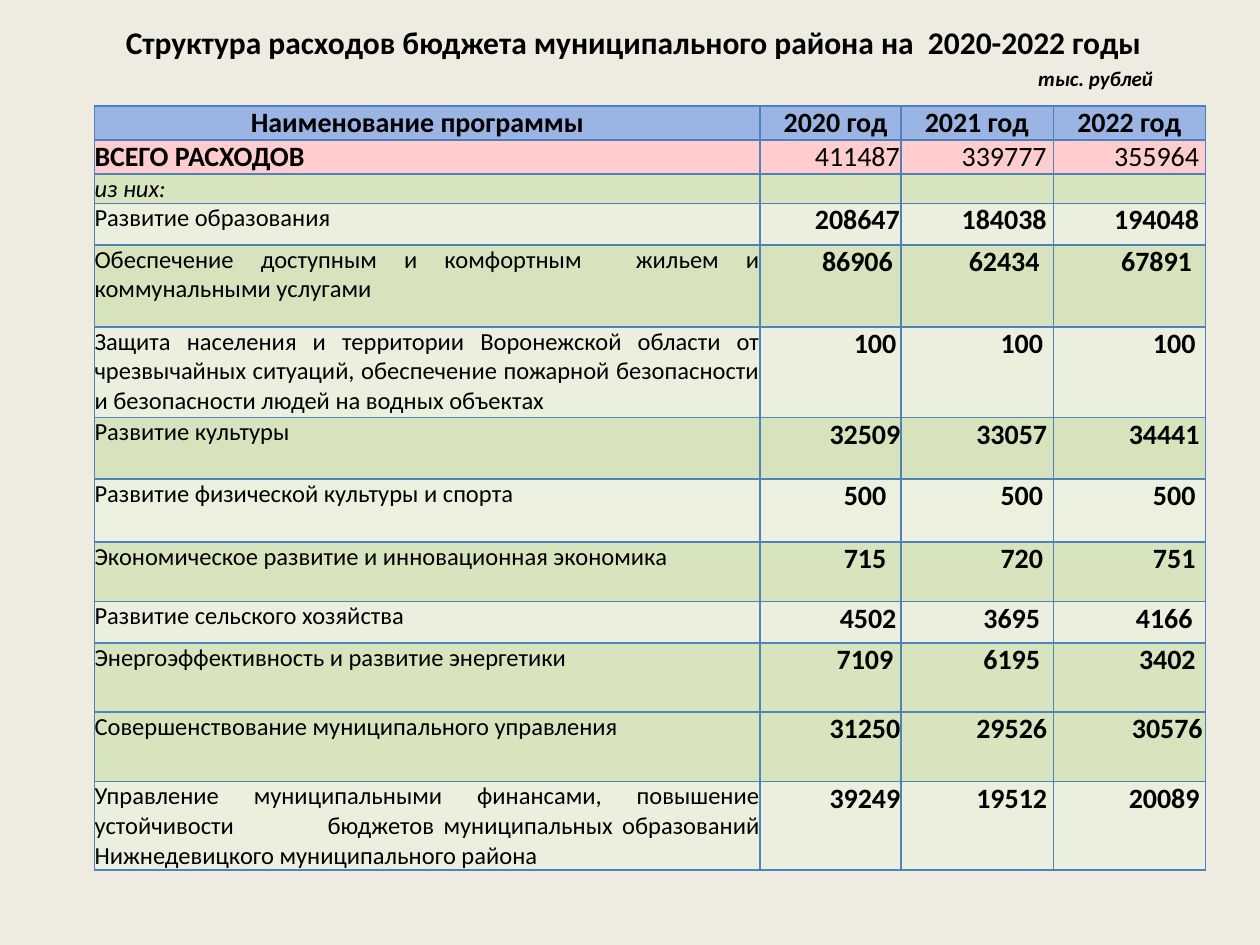
from lxml import etree
from pptx import Presentation
from pptx import util as u
from pptx.dml.color import RGBColor
from pptx.enum import text as t
from pptx.oxml import ns

MID, JUST = t.PP_ALIGN.CENTER, t.PP_ALIGN.JUSTIFY
HEAD, TOTAL, DARK, GREEN = "9AB5E3", "FFCDCD", "D7E4BD", "D6E3BC"
PALE, LIGHT = "EBF0DE", "EBF1DE"
COLS = [5.28, 1.12, 1.21, 1.21]
NAME = dict(size=14, align=JUST)

# Rows: height, fill, name, name format, values, value indents, value bold
ROWS = [
    (0.27, HEAD, "Наименование программы", dict(bold=True, left=1.24),
     ["2020 год", "2021 год", "2022 год"], [0.19] * 3, True),
    (0.27, TOTAL, "ВСЕГО РАСХОДОВ", dict(bold=True),
     [411487, 339777, 355964], [0.43] * 3, False),
    (0.23, DARK, "из них:", dict(size=14, italic=True),
     ["", "", ""], [0] * 3, False),
    (0.33, PALE, "Развитие образования", NAME,
     [208647, 184038, 194048], [0.43] * 3, True),
    (0.65, GREEN, "Обеспечение доступным и комфортным  жильем и "
     "коммунальными услугами", NAME,
     [86906, 62434, 67891], [0.43] * 3, True),
    (0.72, PALE, "Защита населения и территории Воронежской области от "
     "чрезвычайных ситуаций, обеспечение пожарной безопасности и "
     "безопасности людей на водных объектах", NAME,
     [100, 100, 100], [0.71] * 3, True),
    (0.49, GREEN, "Развитие культуры", NAME,
     [32509, 33057, 34441], [0.55] * 3, True),
    (0.5, LIGHT, "Развитие физической культуры и спорта", NAME,
     [500, 500, 500], [0.55, 0.71, 0.71], True),
    (0.47, DARK, "Экономическое развитие и инновационная экономика", NAME,
     [715, 720, 751], [0.55, 0.71, 0.71], True),
    (0.33, PALE, "Развитие сельского хозяйства", NAME,
     [4502, 3695, 4166], [0.6, 0.55, 0.55], True),
    (0.55, DARK, "Энергоэффективность и развитие энергетики", NAME,
     [7109, 6195, 3402], [0.55, 0.55, 0.6], True),
    (0.55, DARK, "Совершенствование муниципального управления", NAME,
     [31250, 29526, 30576], [0.55, 0.55, 0.6], True),
    (0.45, PALE, "Управление муниципальными финансами, повышение "
     "устойчивости\tбюджетов муниципальных образований "
     "Нижнедевицкого муниципального района", dict(NAME, tab=1.85),
     [39249, 19512, 20089], [0.55] * 3, True),
]


def color(code):
    return RGBColor.from_string(code)


def node(parent, tag, **attrs):
    return etree.SubElement(parent, ns.qn(tag), **attrs)


def write(frame, words, size=16, bold=False, italic=False, align=None,
          left=0, tab=0, font="Calibri", ink="000000"):
    para = frame.paragraphs[0]
    if align is not None:
        para.alignment = align
    props = para._p.get_or_add_pPr()
    if left:
        props.set("marL", str(u.Inches(left)))
        props.set("indent", "0")
    if tab:
        stops = node(props, "a:tabLst")
        node(stops, "a:tab", pos=str(u.Inches(tab)), algn="l")
    if not words:
        # An empty cell keeps its row low through its end mark
        node(para._p, "a:endParaRPr", sz=str(size * 100))
        return
    run = para.add_run()
    run.text = words
    face = run.font
    face.name, face.size = font, u.Pt(size)
    face.bold, face.italic = bold, italic
    face.color.rgb = color(ink)


class Deck:
    line = "4F81BC"
    back = "EEECE1"

    def __init__(self):
        self.prs = Presentation()
        self.prs.slide_width = u.Inches(10)
        self.prs.slide_height = u.Inches(7.5)
        self.slide = self.prs.slides.add_slide(self.prs.slide_layouts[6])
        fill = self.slide.background.fill
        fill.solid()
        fill.fore_color.rgb = color(self.back)

    def label(self, box, words, inset=None, **style):
        frame = self.slide.shapes.add_textbox(*map(u.Inches, box)).text_frame
        frame.word_wrap = True
        if inset is not None:
            frame.margin_left = frame.margin_right = u.Inches(inset)
            frame.margin_top = frame.margin_bottom = u.Inches(inset)
        write(frame, words, **style)

    def border(self, cell):
        props = cell._tc.get_or_add_tcPr()
        for spot, side in enumerate("LRTB"):
            edge = etree.Element(ns.qn(f"a:ln{side}"), w=str(u.Pt(1)))
            fill = node(edge, "a:solidFill")
            node(fill, "a:srgbClr", val=self.line)
            props.insert(spot, edge)

    def cell(self, cell, words, fill, **style):
        cell.margin_left = cell.margin_right = 0
        cell.margin_top = cell.margin_bottom = 0
        cell.fill.solid()
        cell.fill.fore_color.rgb = color(fill)
        self.border(cell)
        write(cell.text_frame, words, **style)

    def table(self, left, top, cols, rows):
        high = sum(row[0] for row in rows)
        grid = self.slide.shapes.add_table(
            len(rows), len(cols), u.Inches(left), u.Inches(top),
            u.Inches(sum(cols)), u.Inches(high)).table
        grid.first_row = grid.horz_banding = False
        for col, wide in zip(grid.columns, cols):
            col.width = u.Inches(wide)
        for r, (tall, fill, name, style, vals, lefts, bold) in enumerate(rows):
            grid.rows[r].height = u.Inches(tall)
            self.cell(grid.cell(r, 0), name, fill, **style)
            for c, (val, pad) in enumerate(zip(vals, lefts), 1):
                self.cell(grid.cell(r, c), str(val), fill, left=pad, bold=bold,
                          size=16 if val else 14, align=MID if r else None)


def main():
    deck = Deck()
    # Unit note
    deck.label((8.23, 0.52, 1.26, 0.22), "тыс. рублей", inset=0,
               size=12, bold=True, italic=True, left=0.01)
    # Spending table
    deck.table(0.75, 0.84, COLS, ROWS)
    # Title
    deck.label((0.9, 0.13, 8.82, 0.71),
               "Структура расходов бюджета муниципального района на  "
               "2020-2022 годы", size=18, bold=True)
    deck.prs.save("out.pptx")


if __name__ == "__main__":
    main()
